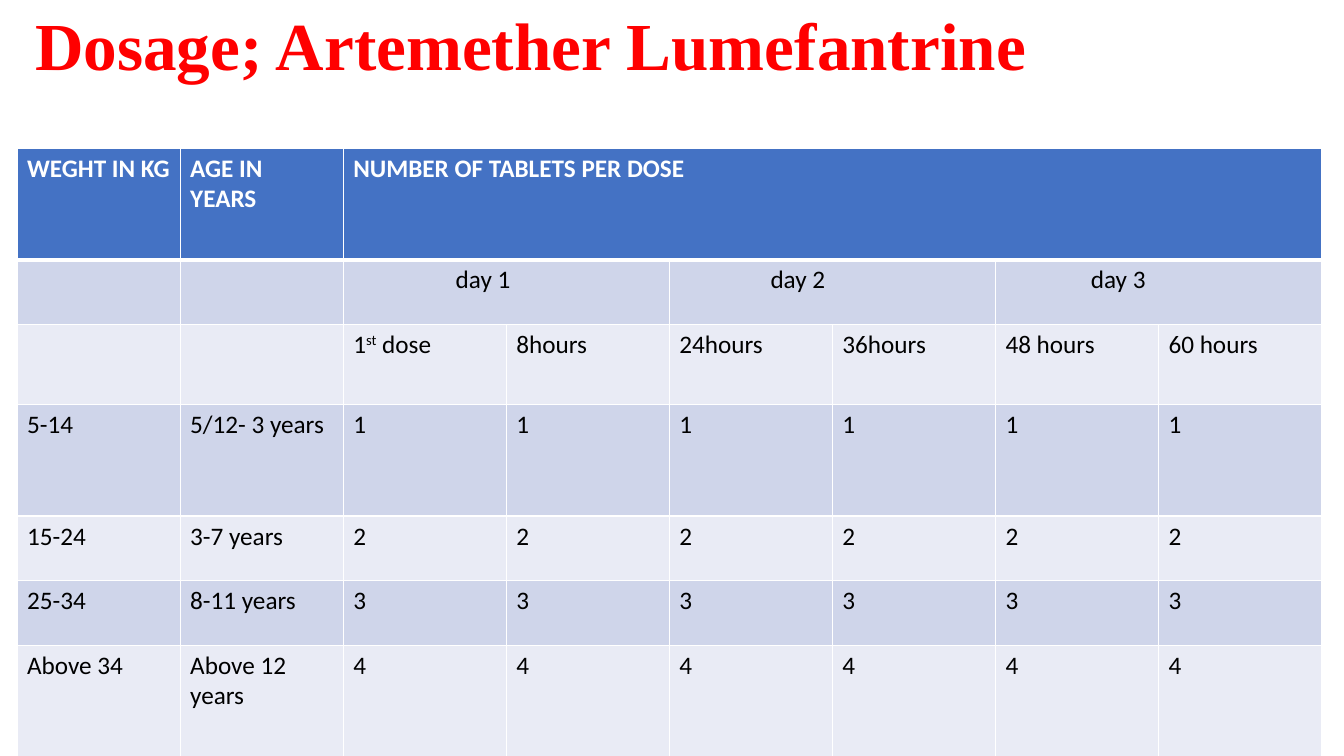
from lxml.etree import SubElement
from pptx import Presentation
from pptx.dml.color import RGBColor
from pptx.enum.text import MSO_ANCHOR
from pptx.oxml.ns import qn
from pptx.util import Pt

COLORS = {
    "title": "FF0000",
    "header": "4472C4",
    "dark_band": "CFD5EA",
    "light_band": "E9EBF5",
    "border": "FFFFFF",
    "header_text": "FFFFFF",
    "body_text": "000000",
}
COLUMNS = 8
ROW_HEIGHTS = [79.9, 46.1, 57, 79.9, 46.1, 46.1, 79.9]
CELL_MARGIN = 7.2
DOSE_TIMES = ["8hours", "24hours", "36hours", "48 hours", "60 hours"]
DAY_INDENTS = {"day 1": 73.2, "day 2": 65.1, "day 3": 61}
# Weight band, age band, tablets in each of the six doses
DOSES = [
    ("5-14", "5/12- 3 years", 1),
    ("15-24", "3-7 years", 2),
    ("25-34", "8-11 years", 3),
    ("Above 34", "Above 12 years", 4),
]


def color(name):
    return RGBColor.from_string(COLORS[name])


def style_font(font, name, size, color_name, bold):
    font.name = name
    font.size = Pt(size)
    font.color.rgb = color(color_name)
    font.bold = bold


def add_title(page, left, top, width, height):
    box = page.shapes.add_textbox(Pt(left), Pt(top), Pt(width), Pt(height))
    frame = box.text_frame
    frame.word_wrap = True
    frame.vertical_anchor = MSO_ANCHOR.MIDDLE
    para = frame.paragraphs[0]
    para.text = "Dosage; Artemether Lumefantrine"
    para.line_spacing = 0.9
    style_font(para.font, "Times New Roman", 48, "title", True)


def set_borders(cell, top_width, bottom_width):
    properties = cell._tc.get_or_add_tcPr()
    widths = {"lnL": 1, "lnR": 1, "lnT": top_width, "lnB": bottom_width}
    for side, width in widths.items():
        line = SubElement(properties, qn(f"a:{side}"), w=str(Pt(width)))
        fill = SubElement(line, qn("a:solidFill"))
        SubElement(fill, qn("a:srgbClr"), val=COLORS["border"])


def style_cell(cell, row):
    set_borders(cell, 3 if row == 1 else 1, 3 if row == 0 else 1)
    band = "header" if row == 0 else ("light_band", "dark_band")[row % 2]
    cell.fill.solid()
    cell.fill.fore_color.rgb = color(band)
    text_color = "body_text" if row else "header_text"
    style_font(cell.text_frame.paragraphs[0].font, "Calibri", 18, text_color, row == 0)


def add_dosage_table(page, left, top, width):
    frame = page.shapes.add_table(len(ROW_HEIGHTS), COLUMNS, Pt(left), Pt(top),
                                  Pt(width), Pt(sum(ROW_HEIGHTS)))
    table = frame.table
    for column in table.columns:
        column.width = Pt(width / COLUMNS)
    for row, height in zip(table.rows, ROW_HEIGHTS):
        row.height = Pt(height)

    # Header
    headings = ["WEGHT IN KG", "AGE IN YEARS", "NUMBER OF TABLETS PER DOSE"]
    for column, heading in enumerate(headings):
        table.cell(0, column).text = heading
    table.cell(0, 2).merge(table.cell(0, COLUMNS - 1))

    # Days, each over two doses
    for day, (label, indent) in enumerate(DAY_INDENTS.items()):
        cell = table.cell(1, 2 + 2 * day)
        cell.merge(table.cell(1, 3 + 2 * day))
        cell.text = label
        cell.margin_left = Pt(CELL_MARGIN + indent)

    # Dose times
    para = table.cell(2, 2).text_frame.paragraphs[0]
    for text in ("1", "st", " dose"):
        span = para.add_run()
        span.text = text
        if text == "st":
            span.font._element.set("baseline", "30000")
    for column, time in enumerate(DOSE_TIMES, start=3):
        table.cell(2, column).text = time

    # Tablets by weight and age
    for row, (weight, age, tablets) in enumerate(DOSES, start=3):
        for column, value in enumerate([weight, age] + [tablets] * 6):
            table.cell(row, column).text = str(value)

    for row in range(len(ROW_HEIGHTS)):
        for column in range(COLUMNS):
            style_cell(table.cell(row, column), row)


def main():
    deck = Presentation()
    deck.slide_width, deck.slide_height = Pt(960), Pt(540)
    page = deck.slides.add_slide(deck.slide_layouts[6])
    add_title(page, 18, 0, 932.4, 69.8)
    add_dosage_table(page, 12.2, 105.8, 932)
    deck.save("out.pptx")


if __name__ == "__main__":
    main()
